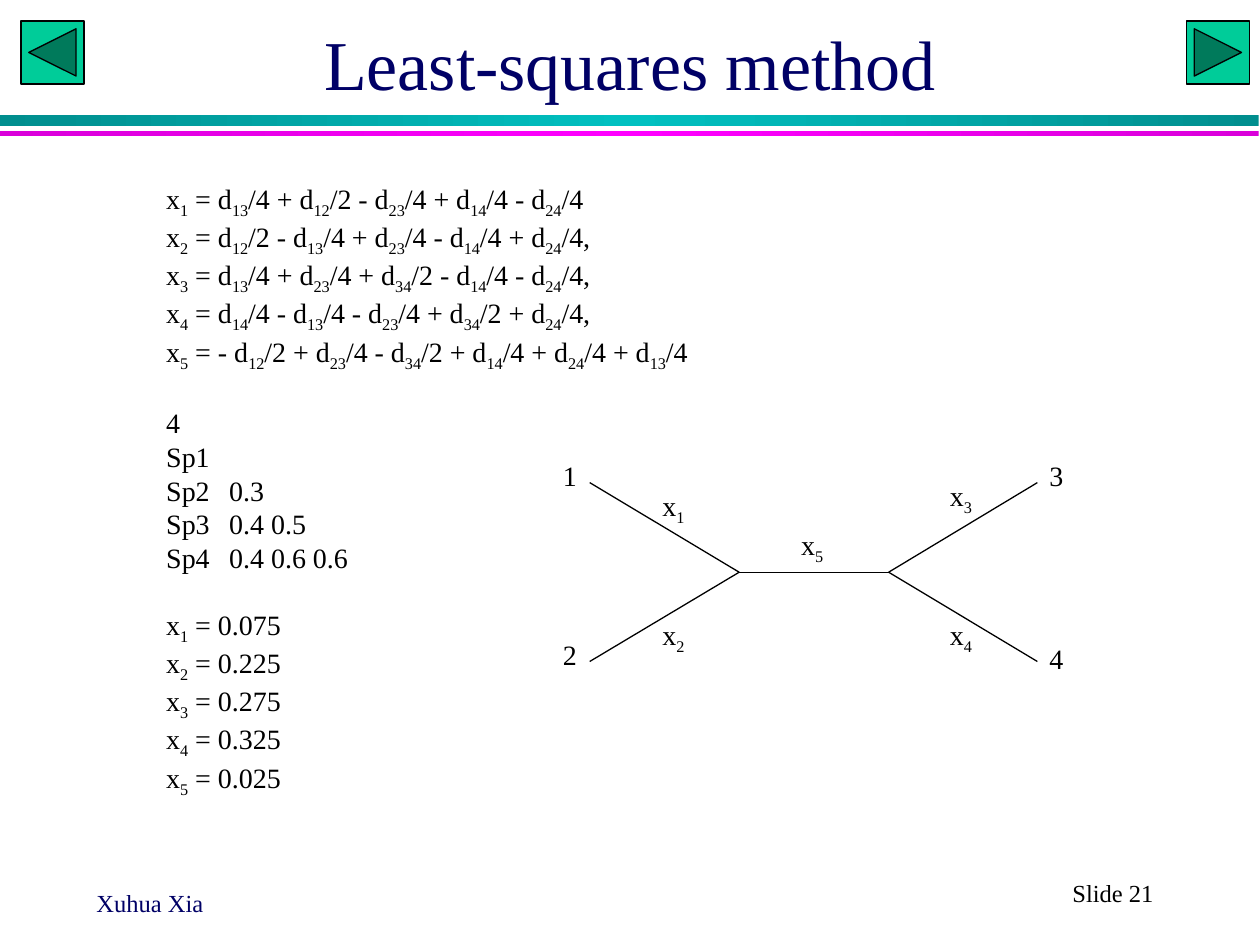
import copy

import pptx
import pptx.dml.color
import pptx.enum.shapes
import pptx.enum.text
import pptx.oxml
import pptx.oxml.ns
import pptx.util

Pt = pptx.util.Pt
SHAPE = pptx.enum.shapes.MSO_SHAPE
ALIGN = pptx.enum.text.PP_ALIGN
ANCHOR = pptx.enum.text.MSO_ANCHOR
qn = pptx.oxml.ns.qn

FONT = "Times New Roman"
COLORS = {"ink": "000000", "navy": "000066", "button": "00CC99",
          "teal": "00C0C0", "teal_edge": "008E8E",
          "pink": "FF00FF", "pink_edge": "DA00DA"}

# Text between underscores is subscript
EQUATIONS = [
    "x_1_ = d_13_/4 + d_12_/2 - d_23_/4 + d_14_/4 - d_24_/4",
    "x_2_ = d_12_/2 - d_13_/4 + d_23_/4 - d_14_/4 + d_24_/4,",
    "x_3_ = d_13_/4 + d_23_/4 + d_34_/2 - d_14_/4 - d_24_/4,",
    "x_4_ = d_14_/4 - d_13_/4 - d_23_/4 + d_34_/2 + d_24_/4,",
    "x_5_ = - d_12_/2 + d_23_/4 - d_34_/2 + d_14_/4 + d_24_/4 + d_13_/4",
]
MATRIX = ["4", "Sp1", "Sp2\t0.3", "Sp3\t0.4 0.5", "Sp4\t0.4 0.6 0.6"]
LENGTHS = [f"x_{i}_ = {v}" for i, v in
           enumerate(["0.075", "0.225", "0.275", "0.325", "0.025"], 1)]


def rgb(name):
    return pptx.dml.color.RGBColor.from_string(COLORS[name])


def set_attrs(obj, **values):
    for name, value in values.items():
        setattr(obj, name, value)


def place(sp, left, top, width, height):
    set_attrs(sp, left=Pt(left), top=Pt(top), width=Pt(width), height=Pt(height))


def write(p, text, size=16, color="ink"):
    for i, part in enumerate(text.split("_")):
        if not part:
            continue
        r = p.add_run()
        r.text = part
        set_attrs(r.font, size=Pt(size), name=FONT)
        r.font.color.rgb = rgb(color)
        if i % 2:
            r.font._element.set("baseline", "-25000")


def add_label(slide, text, box, size=16, color="ink", align=ALIGN.LEFT):
    tf = slide.shapes.add_textbox(*map(Pt, box)).text_frame
    tf.word_wrap = True
    p = tf.paragraphs[0]
    p.alignment = align
    write(p, text, size, color)


def add_bar(slide, top, height, middle, edge):
    sp = slide.shapes.add_shape(SHAPE.RECTANGLE, 0, Pt(top), Pt(719.3), Pt(height))
    sp.shadow.inherit = False
    sp.line.fill.background()
    sp.fill.gradient()
    sp.fill.gradient_angle = 0
    stops = sp._element.spPr.find(qn("a:gradFill")).find(qn("a:gsLst"))
    stops.append(copy.deepcopy(stops[-1]))
    for stop, pos, color in zip(sp.fill.gradient_stops, (0, 0.5, 1),
                                (edge, middle, edge)):
        stop.position = pos
        stop.color.rgb = rgb(color)


def add_button(slide, kind, left):
    sp = slide.shapes.add_shape(kind, Pt(left), Pt(12), Pt(36), Pt(36))
    sp.shadow.inherit = False
    sp.fill.solid()
    sp.fill.fore_color.rgb = rgb("button")
    sp.line.color.rgb = rgb("ink")
    sp.line.width = Pt(0.75)


def add_branch(slide, start, end):
    line = slide.shapes.add_connector(
        pptx.enum.shapes.MSO_CONNECTOR.STRAIGHT, *map(Pt, start + end))
    line.line.color.rgb = rgb("ink")
    line.line.width = Pt(0.75)
    line._element.spPr.append(pptx.oxml.parse_xml(
        f"<a:effectLst {pptx.oxml.ns.nsdecls('a')}/>"))


def fill_title(sp, text):
    place(sp, 54, 0, 612, 72)
    tf = sp.text_frame
    set_attrs(tf, vertical_anchor=ANCHOR.MIDDLE, word_wrap=True)
    tf.paragraphs[0].alignment = ALIGN.CENTER
    write(tf.paragraphs[0], text, 40, "navy")


def fill_body(sp, blocks, gap=19.2, tab=56.5):
    place(sp, 87.8, 100, 584, 360)
    tf = sp.text_frame
    set_attrs(tf, word_wrap=True, auto_size=pptx.enum.text.MSO_AUTO_SIZE.NONE)
    p = None
    for b, block in enumerate(blocks):
        for i, text in enumerate(block):
            p = tf.add_paragraph() if p else tf.paragraphs[0]
            p.space_before = Pt(gap if b and i == 0 else 0)
            pPr = p._p.get_or_add_pPr()
            pPr.set("marL", "0")
            pPr.set("indent", "0")
            ns = pptx.oxml.ns.nsdecls("a")
            pPr.append(pptx.oxml.parse_xml(f"<a:buNone {ns}/>"))
            if "\t" in text:
                pPr.append(pptx.oxml.parse_xml(
                    f'<a:tabLst {ns}><a:tab pos="{Pt(tab)}" algn="l"/></a:tabLst>'))
            write(p, text)


def add_tree(slide):
    # Four leaves joined through two inner nodes
    left, right, mid = 337, 592.8, 327
    node_a, node_b = (422.4, mid), (507.8, mid)
    for y in (275.8, 378):
        add_branch(slide, (left, y), node_a)
        add_branch(slide, (right, y), node_b)
    add_branch(slide, node_a, node_b)

    # Leaf numbers and branch lengths
    labels = {"1": (314.6, 258.5), "2": (314.6, 360.7),
              "3": (592.6, 258.5), "4": (592.6, 362.9),
              "x_1_": (371.5, 275.8), "x_2_": (371.5, 349.2),
              "x_3_": (535.7, 270), "x_4_": (535.7, 349.2),
              "x_5_": (450.7, 298)}
    for text, corner in labels.items():
        add_label(slide, text, corner + (33.8, 26.6))


def main():
    prs = pptx.Presentation()
    set_attrs(prs, slide_width=Pt(720), slide_height=Pt(540))
    slide = prs.slides.add_slide(prs.slide_layouts[1])

    # Header bars and navigation
    add_bar(slide, 66, 6, "teal", "teal_edge")
    add_bar(slide, 75, 3, "pink", "pink_edge")
    add_button(slide, SHAPE.ACTION_BUTTON_BACK_OR_PREVIOUS, 12)
    add_button(slide, SHAPE.ACTION_BUTTON_FORWARD_OR_NEXT, 678)

    # Title, calculations and tree
    title, body = slide.placeholders
    fill_title(title, "Least-squares method")
    fill_body(body, [EQUATIONS, MATRIX, LENGTHS])
    add_tree(slide)

    # Footer
    add_label(slide, "Xuhua Xia", (48, 504, 150, 18), 14, "navy")
    add_label(slide, "Slide 21", (564, 498, 144, 24), 14, align=ALIGN.CENTER)
    prs.save("out.pptx")


if __name__ == "__main__":
    main()
